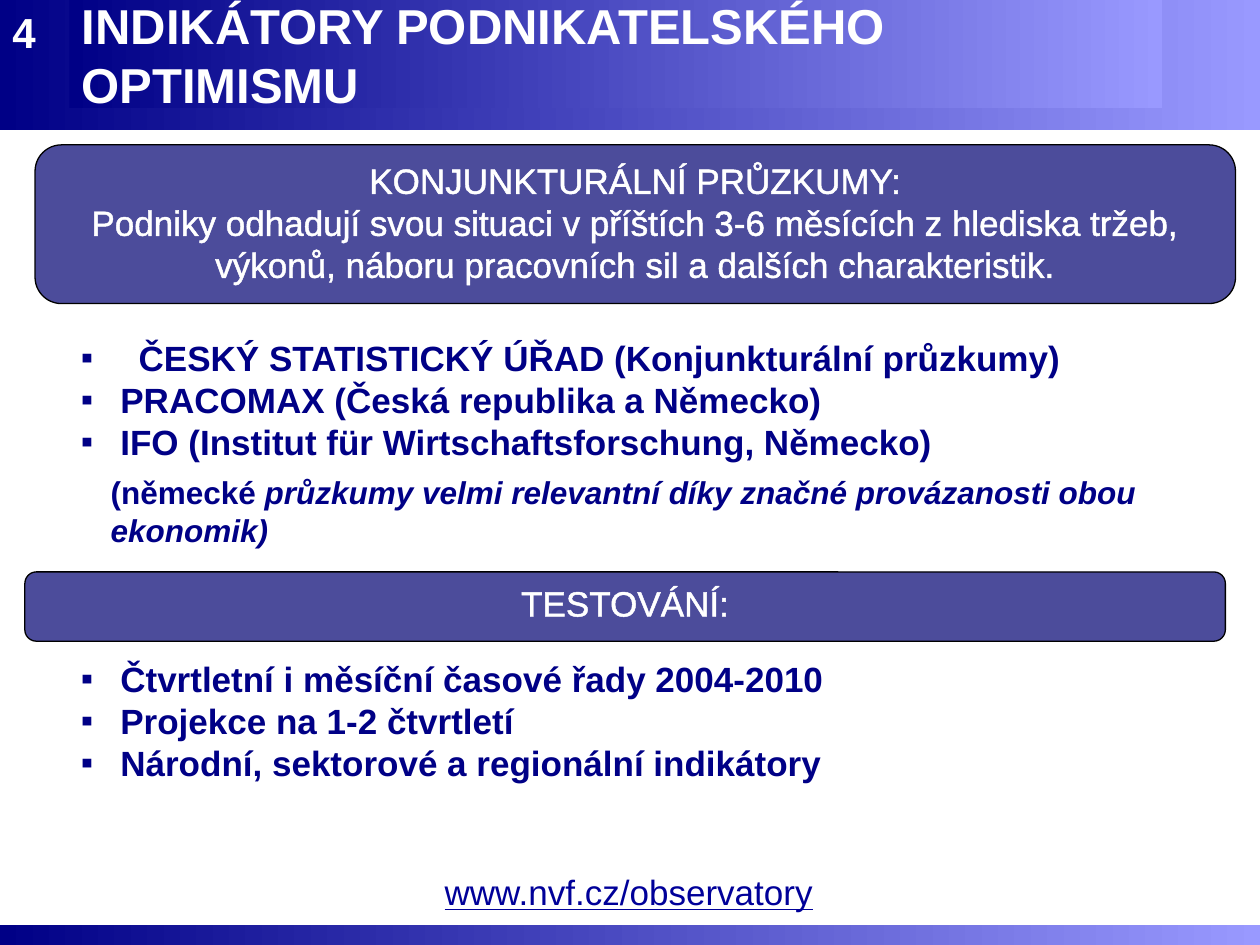
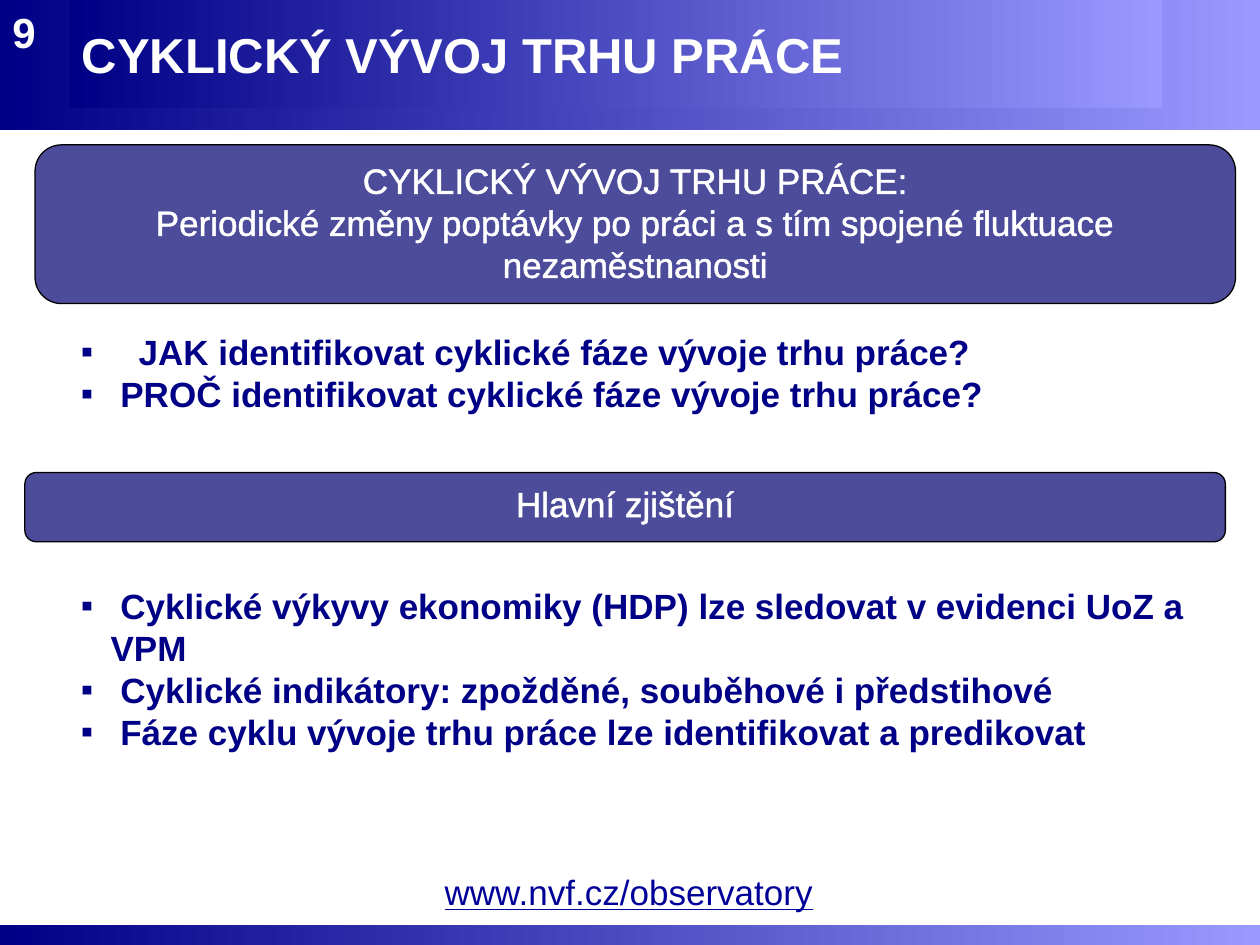
from pptx import Presentation
from pptx.dml.color import RGBColor
from pptx.enum import shapes, text
from pptx.oxml import parse_xml
from pptx.oxml import ns
from pptx.util import Pt

COLORS = {"navy": "000086", "lilac": "9999FF", "panel": "2D2D8A", "link": "000099",
          "white": "FFFFFF", "black": "000000"}
FONT = "Arial"
WIDTH, HEIGHT = 720, 540
LIST_INDENT, BULLET_HANG = 56, 17
TWO_CONTENT = 3


def rgb(name):
    return RGBColor.from_string(COLORS[name])


def drawing_xml(tag, attributes="", inner=""):
    return parse_xml(f'<a:{tag} {ns.nsdecls("a")} {attributes}>{inner}</a:{tag}>')


def place(shape, left, top, width, height):
    frame = {"left": left, "top": top, "width": width, "height": height}
    for name, value in frame.items():
        setattr(shape, name, Pt(value))


class Deck:
    """Holds the shared style and the slide being built."""

    def __init__(self):
        self.presentation = Presentation()
        self.presentation.slide_width = Pt(WIDTH)
        self.presentation.slide_height = Pt(HEIGHT)
        self.layout = self.presentation.slide_layouts[TWO_CONTENT]
        self.slide = None

    def new_slide(self):
        self.slide = self.presentation.slides.add_slide(self.layout)

    def share(self, *items):
        """Moves shapes from the current slide to the back of its layout."""
        for position, shape in enumerate(items, start=2):
            self.layout.shapes.element.insert(position, shape.element)

    def gradient(self, shape):
        shape.fill.gradient()
        shape.fill.gradient_angle = 0
        for stop, name in zip(shape.fill.gradient_stops, ("navy", "lilac")):
            stop.color.rgb = rgb(name)

    def translucent(self, shape, color, percent):
        shape.fill.solid()
        shape.fill.fore_color.rgb = rgb(color)
        color_element = shape.element.spPr.find(".//" + ns.qn("a:srgbClr"))
        color_element.append(drawing_xml("alpha", f'val="{percent * 1000}"'))

    def add_text(self, paragraph, content, color, size=20, **formats):
        run = paragraph.add_run()
        run.text = content
        for name, value in {"name": FONT, "size": Pt(size), **formats}.items():
            setattr(run.font, name, value)
        run.font.color.rgb = rgb(color)
        return run

    def band(self, top, height):
        shape = self.slide.shapes.add_shape(
            shapes.MSO_SHAPE.RECTANGLE, 0, Pt(top), Pt(WIDTH), Pt(height))
        shape.shadow.inherit = False
        shape.line.fill.background()
        self.gradient(shape)
        return shape

    def label(self, content, box, color, **formats):
        shape = self.slide.shapes.add_textbox(*map(Pt, box))
        shape.text_frame.word_wrap = True
        self.add_text(shape.text_frame.paragraphs[0], content, color, **formats)
        return shape

    def title(self, content):
        shape = self.slide.shapes.title
        place(shape, 39.6, 0, 624.4, 62)
        self.gradient(shape)
        frame = shape.text_frame
        frame.word_wrap = False
        frame.auto_size = text.MSO_AUTO_SIZE.NONE
        frame.vertical_anchor = text.MSO_ANCHOR.MIDDLE
        paragraph = frame.paragraphs[0]
        paragraph.alignment = text.PP_ALIGN.LEFT
        self.add_text(paragraph, content, "white", size=28, bold=True)

    def panel(self, lines, left, top, height):
        """Draws a rounded heading box with outlined, centred text."""
        shape = self.slide.shapes.add_shape(
            shapes.MSO_SHAPE.ROUNDED_RECTANGLE, Pt(left), Pt(top), Pt(686), Pt(height))
        shape.shadow.inherit = False
        self.translucent(shape, "panel", 85)
        shape.line.color.rgb = rgb("black")
        shape.line.width = Pt(0.75)
        frame = shape.text_frame
        frame.vertical_anchor = text.MSO_ANCHOR.TOP
        frame.margin_bottom = 0
        for number, line in enumerate(lines):
            paragraph = frame.add_paragraph() if number else frame.paragraphs[0]
            paragraph.alignment = text.PP_ALIGN.CENTER
            run = self.add_text(paragraph, line, "white")
            fill = f'<a:solidFill><a:srgbClr val="{COLORS["white"]}"/></a:solidFill>'
            run.font._element.insert(0, drawing_xml("ln", f'w="{Pt(1.45)}"', fill))

    def start_item(self, frame, bulleted, space_after):
        first = not frame.paragraphs[0].runs
        paragraph = frame.paragraphs[0] if first else frame.add_paragraph()
        paragraph.space_before = Pt(0)
        paragraph.space_after = Pt(space_after)
        properties = paragraph._p.get_or_add_pPr()
        properties.set("marL", str(Pt(LIST_INDENT)))
        properties.set("indent", str(-Pt(BULLET_HANG) if bulleted else 0))
        if bulleted:
            properties.append(drawing_xml("buFont", f'typeface="{FONT}"'))
            properties.append(drawing_xml("buChar", 'char="▪"'))
        else:
            properties.append(drawing_xml("buNone"))
        return paragraph

    def bullets(self, index, items, top, height, note=()):
        """Fills a body placeholder; a note is an unbulleted (plain, italic) pair."""
        shape = self.slide.placeholders[index]
        place(shape, 0, top, WIDTH, height)
        self.translucent(shape, "white", 51)
        frame = shape.text_frame
        frame.auto_size = text.MSO_AUTO_SIZE.NONE
        for item in items:
            space_after = 6 if note and item == items[-1] else 0
            paragraph = self.start_item(frame, True, space_after)
            self.add_text(paragraph, item, "navy", bold=True)
        if note:
            paragraph = self.start_item(frame, False, 6)
            for content, italic in zip(note, (False, True)):
                self.add_text(paragraph, content, "navy", size=18, bold=True, italic=italic)

    def frame(self, number, title):
        """Adds the title, bottom strip and slide number."""
        self.title(title)
        self.band(528.5, 11.5)
        corner = self.label(number, (0, 0, 32, 32), "white", size=24, bold=True)
        corner.text_frame.margin_bottom = 0


SLIDES = [
    {
        "number": "4",
        "title": "INDIKÁTORY PODNIKATELSKÉHO OPTIMISMU",
        "intro": ["KONJUNKTURÁLNÍ PRŮZKUMY:",
                  "Podniky odhadují svou situaci v příštích 3-6 měsících z hlediska tržeb, "
                  "výkonů, náboru pracovních sil a dalších charakteristik."],
        "upper": {"top": 188.6, "height": 174,
                  "items": ["\tČESKÝ STATISTICKÝ ÚŘAD (Konjunkturální průzkumy)",
                            " PRACOMAX (Česká republika a Německo)",
                            " IFO (Institut für Wirtschaftsforschung, Německo)"],
                  "note": ("(německé ", "průzkumy velmi relevantní díky značné "
                           "provázanosti obou ekonomik)")},
        "heading": "TESTOVÁNÍ:",
        "heading_top": 326.8,
        "lower": {"top": 372.2, "height": 80,
                  "items": [" Čtvrtletní i měsíční časové řady 2004-2010",
                            " Projekce na 1-2 čtvrtletí",
                            " Národní, sektorové a regionální indikátory"]},
    },
    {
        "number": "9",
        "title": "CYKLICKÝ VÝVOJ TRHU PRÁCE",
        "intro": ["CYKLICKÝ VÝVOJ TRHU PRÁCE:",
                  "Periodické změny poptávky po práci a s tím spojené fluktuace "
                  "nezaměstnanosti"],
        "upper": {"top": 185, "height": 55.4,
                  "items": ["\tJAK identifikovat cyklické fáze vývoje trhu práce?",
                            " PROČ identifikovat cyklické fáze vývoje trhu práce?"]},
        "heading": "Hlavní zjištění",
        "heading_top": 270,
        "lower": {"top": 330.5, "height": 104.4,
                  "items": [" Cyklické výkyvy ekonomiky (HDP) lze sledovat v evidenci UoZ a VPM",
                            " Cyklické indikátory: zpožděné, souběhové i předstihové",
                            " Fáze cyklu vývoje trhu práce lze identifikovat a predikovat"]},
    },
]


def main():
    deck = Deck()
    for position, content in enumerate(SLIDES):
        deck.new_slide()
        if position == 0:
            address = deck.label("www.nvf.cz/observatory", (247, 494, 238, 31), "link",
                                 underline=True)
            deck.share(deck.band(0, 74.2), address)
        deck.frame(content["number"], content["title"])
        deck.bullets(1, **content["upper"])
        deck.bullets(2, **content["lower"])
        deck.panel(content["intro"], 20, 82.8, 90.7)
        deck.panel([content["heading"]], 14.2, content["heading_top"], 39.6)
    deck.presentation.save("out.pptx")


if __name__ == "__main__":
    main()
